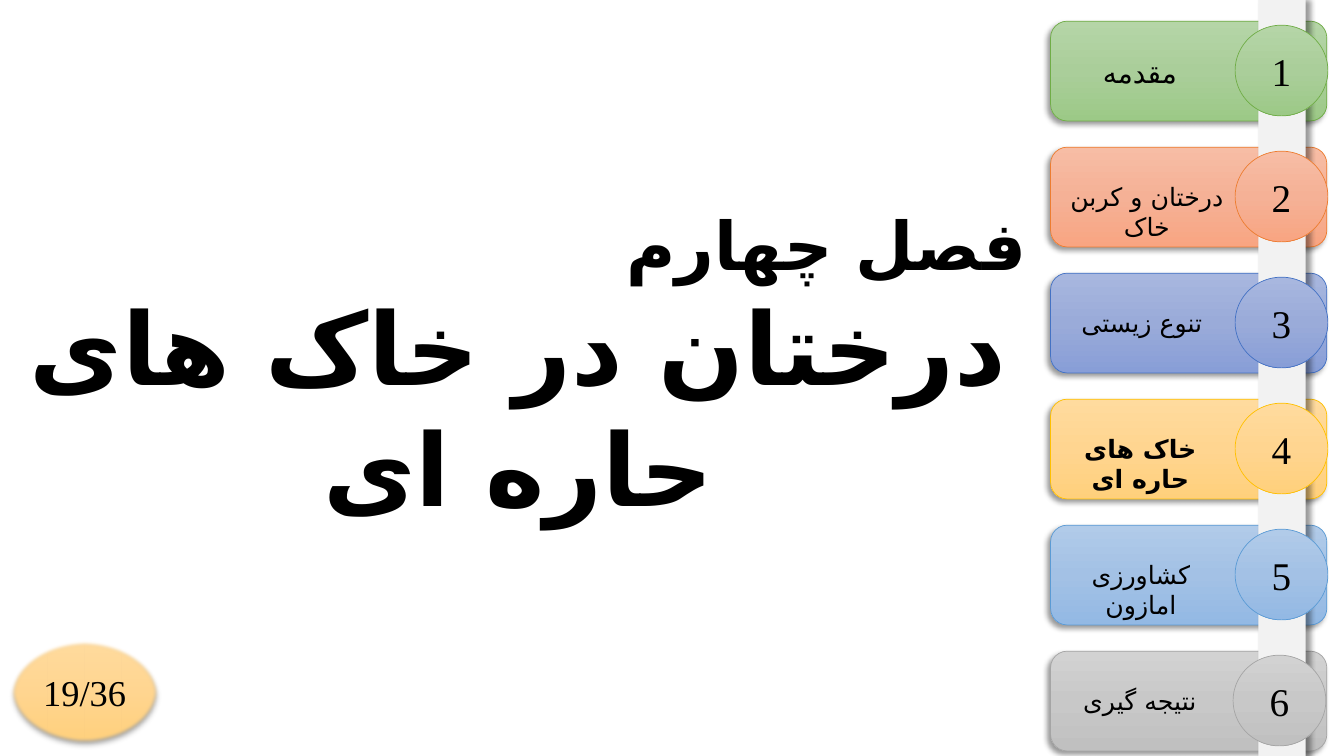
from lxml import etree
from pptx import Presentation
from pptx.dml.color import RGBColor
from pptx.enum.shapes import MSO_SHAPE
from pptx.enum.text import MSO_ANCHOR, MSO_AUTO_SIZE, PP_ALIGN
from pptx.oxml.ns import qn
from pptx.util import Inches, Pt

CENTER, RIGHT = PP_ALIGN.CENTER, PP_ALIGN.RIGHT
MIDDLE, TOP = MSO_ANCHOR.MIDDLE, MSO_ANCHOR.TOP
ROUNDED, RECT = MSO_SHAPE.ROUNDED_RECTANGLE, MSO_SHAPE.RECTANGLE
CIRCLE = MSO_SHAPE.FLOWCHART_CONNECTOR
NO_FIT = MSO_AUTO_SIZE.NONE
PERSIAN_FONT = "DejaVu Sans"

# Line colour, then gradient from top to bottom
GREEN = ("70AD47", "B5D5A7", "AACE9A", "9CC987")
ORANGE = ("ED7D31", "F7BDA5", "F5B196", "F8A582")
BLUE = ("4472C4", "A8B7DF", "9AABD9", "889ED7")
GOLD = ("FFC000", "FFDB9E", "FFD590", "FFD07C")
SKY = ("5B9BD5", "B1CBE9", "A3C1E5", "93B9E4")
GRAY = ("A5A5A5", "D2D2D2", "C8C8C8", "C0C0C0")

# Label, palette, left, width, size, bold
CHAPTERS = [
    ("مقدمه", GREEN, 10.57, 1.47, 20, False),
    ("درختان و کربن خاک", ORANGE, 10.46, 1.83, 18, False),
    ("تنوع زیستی", BLUE, 10.48, 1.69, 18, False),
    ("خاک های حاره ای", GOLD, 10.43, 1.76, 18, True),
    ("کشاورزی امازون", SKY, 10.47, 1.69, 18, False),
    ("نتیجه گیری", GRAY, 10.46, 1.69, 18, False),
]
PITCH = 1.25


def add_shape(kind, x, y, w, h, colors, shadow_angle=None):
    """Add a shape with a plain or three-stop fill and an optional shadow."""
    sp = s.shapes.add_shape(kind, Inches(x), Inches(y), Inches(w), Inches(h))
    sp.shadow.inherit = False
    if len(colors) == 1:
        sp.fill.solid()
        sp.fill.fore_color.rgb = RGBColor.from_string(colors[0])
        sp.line.fill.background()
    else:
        sp.fill.gradient()
        sp.fill.gradient_angle = 270
        stops = sp._element.spPr.find(".//" + qn("a:gsLst"))
        for stop in list(stops):
            stops.remove(stop)
        for i, color in enumerate(colors[1:]):
            stop = etree.SubElement(stops, qn("a:gs"), pos=str(i * 50000))
            etree.SubElement(stop, qn("a:srgbClr"), val=color)
        sp.line.color.rgb = RGBColor.from_string(colors[0])
        sp.line.width = Pt(0.5)
    if shadow_angle is not None:
        effects = sp._element.spPr.find(qn("a:effectLst"))
        shadow = etree.SubElement(
            effects, qn("a:outerShdw"), blurRad=str(Pt(4)), dist=str(Pt(3)),
            dir=str(shadow_angle * 60000), algn="ctr", rotWithShape="0")
        color = etree.SubElement(shadow, qn("a:srgbClr"), val="000000")
        etree.SubElement(color, qn("a:alpha"), val="40000")
    return sp


def format_text(p, size, font, align=CENTER, bold=False, rtl=False):
    """Format a paragraph and its runs."""
    p.alignment = align
    if rtl:
        p._p.get_or_add_pPr().set("rtl", "1")
    for r in p.runs:
        r.font.size = Pt(size)
        r.font.name = font
        r.font.bold = bold
        r.font.color.rgb = RGBColor.from_string("000000")
        if rtl:
            etree.SubElement(r._r.rPr, qn("a:cs"), typeface=PERSIAN_FONT)


prs = Presentation()
prs.slide_width, prs.slide_height = Inches(13.33), Inches(7.5)
s = prs.slides.add_slide(prs.slide_layouts[5])

# Chapter title
title = s.shapes.title
title.left, title.top = Inches(0), Inches(0.49)
title.width, title.height = Inches(10.28), Inches(6.26)
tf = title.text_frame
tf.word_wrap = True
tf.auto_size = NO_FIT
tf.vertical_anchor = MIDDLE
tf.text = "فصل چهارم\nدرختان در خاک های حاره ای"
format_text(tf.paragraphs[0], 48, "Calibri", RIGHT, True, True)
format_text(tf.paragraphs[1], 72, "Calibri", CENTER, True, True)

# Chapter cards and the strip across them
for i, chapter in enumerate(CHAPTERS):
    add_shape(ROUNDED, 10.42, 0.21 + i * PITCH, 2.74, 0.99, chapter[1], 135)
add_shape(RECT, 12.48, 0, 0.47, 7.76, ["F2F2F2"], 0)

# Chapter numbers and labels
for i, (label, palette, x, w, size, bold) in enumerate(CHAPTERS):
    number_x = 12.23 if palette == GRAY else 12.25
    sp = add_shape(CIRCLE, number_x, 0.25 + i * PITCH, 0.92, 0.9, palette)
    sp.text_frame.text = str(i + 1)
    sp.text_frame.vertical_anchor = MIDDLE
    format_text(sp.text_frame.paragraphs[0], 28, "Times New Roman")

    box = s.shapes.add_textbox(Inches(x), Inches(0.5 + i * PITCH),
                               Inches(w), Inches(0.4))
    tf = box.text_frame
    tf.word_wrap = True
    tf.vertical_anchor = TOP
    tf.text = label
    format_text(tf.paragraphs[0], size, "Calibri", CENTER, bold, True)

# Page badge with a soft edge
badge = add_shape(CIRCLE, 0.11, 6.36, 1.46, 1.01, GOLD, 90)
etree.SubElement(badge._element.spPr.find(qn("a:effectLst")),
                 qn("a:softEdge"), rad=str(Pt(2.5)))
tf = badge.text_frame
tf.text = "19/36"
tf.word_wrap = True
tf.vertical_anchor = MIDDLE
format_text(tf.paragraphs[0], 26, "Times New Roman")

prs.save("out.pptx")
